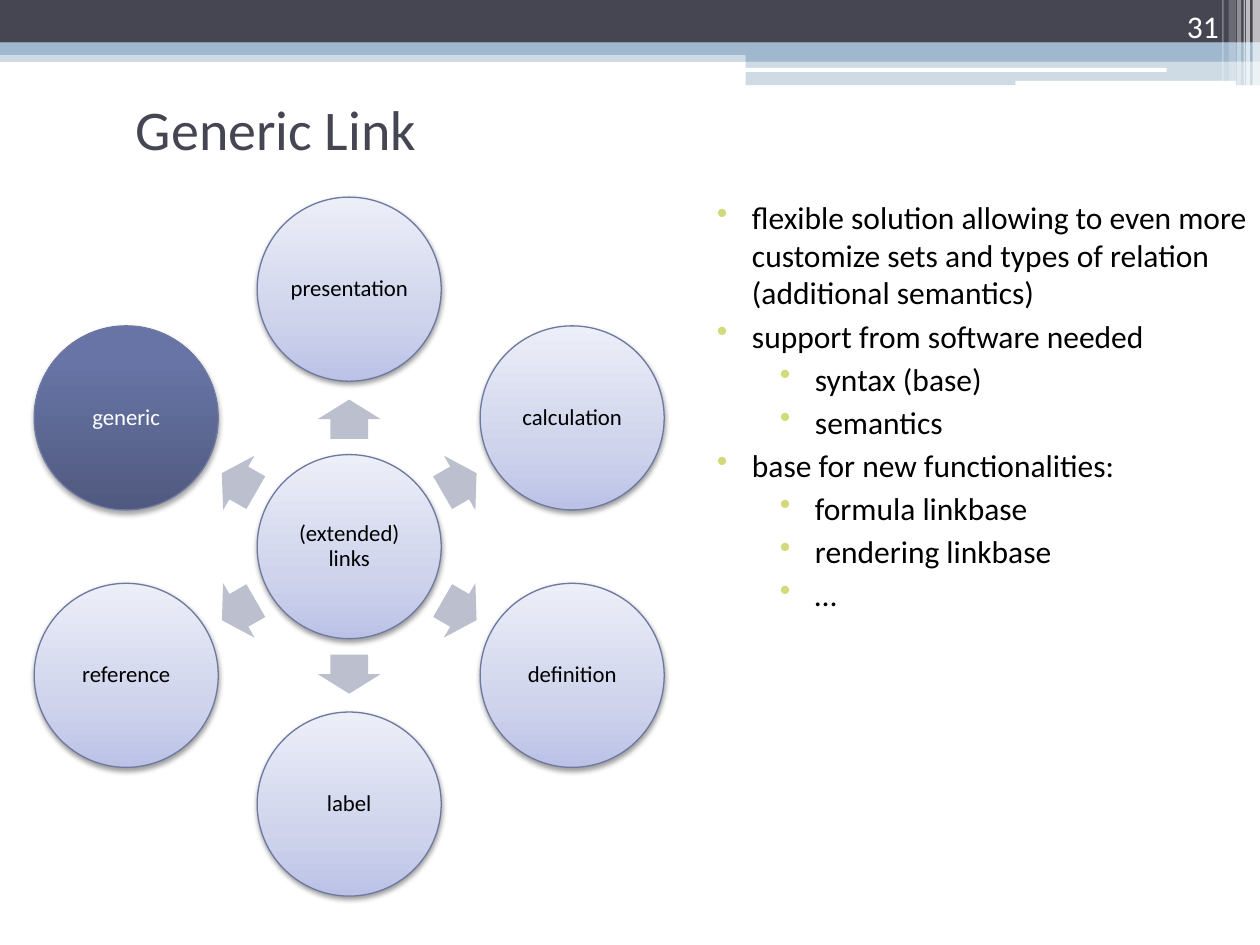
import math

from lxml import etree
from pptx import Presentation
from pptx.dml.color import RGBColor
from pptx.enum import shapes, text
from pptx.oxml.ns import qn
from pptx.util import Cm, Pt

INK = RGBColor(0x46, 0x46, 0x53)
STEEL = RGBColor(0x9F, 0xB8, 0xCD)
WHITE = RGBColor(0xFF, 0xFF, 0xFF)
BLACK = RGBColor(0x00, 0x00, 0x00)
OUTLINE = RGBColor(0x6E, 0x79, 0xA1)
ARROW = RGBColor(0xBC, 0xBF, 0xCE)
BULLET = RGBColor(0xD2, 0xDA, 0x7A)
PALE_STOPS = [
    (0, RGBColor(0xBB, 0xC2, 0xE6)),
    (35, RGBColor(0xCF, 0xD4, 0xEC)),
    (100, RGBColor(0xEC, 0xEE, 0xF8)),
]
DARK_STOPS = [
    (0, RGBColor(0x50, 0x59, 0x7F)),
    (80, RGBColor(0x67, 0x74, 0xA5)),
    (100, RGBColor(0x67, 0x74, 0xA7)),
]
KINDS = shapes.MSO_SHAPE


def add_filled(kind, left, top, width, height, color, opacity=100):
    shape = page.shapes.add_shape(kind, Cm(left), Cm(top), Cm(width), Cm(height))
    shape.shadow.inherit = False
    shape.line.fill.background()
    shape.fill.solid()
    shape.fill.fore_color.rgb = color
    if opacity < 100:
        tint = shape._element.spPr.find(qn("a:solidFill"))[0]
        etree.SubElement(tint, qn("a:alpha"), val=str(opacity * 1000))
    return shape


def add_span(para, words, size, color):
    span = para.add_run()
    span.text = words
    span.font.name = "Calibri"
    span.font.size = Pt(size)
    span.font.color.rgb = color


deck = Presentation()
deck.slide_width = Cm(25.4)
deck.slide_height = Cm(19.05)
page = deck.slides.add_slide(deck.slide_layouts[6])

for left, top, width, height, color, opacity in [
    (0, 1.02, 25.4, 0.23, STEEL, 50),
    (0, 0, 25.4, 0.86, INK, 100),
    (0, 0.86, 25.4, 0.25, STEEL, 100),
    (15.03, 0.99, 10.37, 0.25, STEEL, 100),
    (15.03, 1.22, 10.37, 0.5, STEEL, 50),
]:
    add_filled(KINDS.RECTANGLE, left, top, width, height, color, opacity)

for left, top, width, height in [(15.01, 1.37, 8.51, 0.08), (20.47, 1.63, 4.45, 0.1)]:
    add_filled(KINDS.ROUNDED_RECTANGLE, left, top, width, height, WHITE)

for left, width, height, opacity in [
    (25.25, 0.15, 1.73, 65),
    (25.12, 0.08, 1.73, 65),
    (25.07, 0.03, 1.73, 60),
    (24.94, 0.08, 1.73, 40),
    (24.77, 0.15, 1.63, 20),
    (24.64, 0.03, 1.63, 30),
]:
    add_filled(KINDS.RECTANGLE, left, 0, width, height, WHITE, opacity)

for words, left, top, width, height, size, color, anchor, align in [
    ("Generic Link", 2.49, 1.19, 22.1, 2.77, 32, INK,
     text.MSO_ANCHOR.MIDDLE, text.PP_ALIGN.LEFT),
    ("31", 22.71, 0, 2.11, 1.02, 18, WHITE,
     text.MSO_ANCHOR.BOTTOM, text.PP_ALIGN.RIGHT),
]:
    box = page.shapes.add_textbox(Cm(left), Cm(top), Cm(width), Cm(height))
    box.text_frame.word_wrap = True
    box.text_frame.vertical_anchor = anchor
    para = box.text_frame.paragraphs[0]
    para.alignment = align
    add_span(para, words, size, color)

HUB_X, HUB_Y = 7.04, 11.02
DIAMETER = 3.71
ORBIT = 5.19
ARROW_ORBIT = 2.57
ARROW_LENGTH, ARROW_WIDTH = 0.79, 1.27

circles = [(["(extended)", "links"], HUB_X, HUB_Y)]
satellites = ["presentation", "calculation", "definition", "label", "reference", "generic"]
for index, name in enumerate(satellites):
    degrees = index * 60 - 90
    across, down = math.cos(math.radians(degrees)), math.sin(math.radians(degrees))
    circles.append(([name], HUB_X + ORBIT * across, HUB_Y + ORBIT * down))
    arrow = add_filled(
        KINDS.RIGHT_ARROW,
        HUB_X + ARROW_ORBIT * across - ARROW_LENGTH / 2,
        HUB_Y + ARROW_ORBIT * down - ARROW_WIDTH / 2,
        ARROW_LENGTH, ARROW_WIDTH, ARROW,
    )
    arrow.adjustments[0] = 0.6
    arrow.rotation = degrees % 360

for lines, center_x, center_y in circles:
    chosen = lines == ["generic"]
    circle = add_filled(
        KINDS.OVAL, center_x - DIAMETER / 2, center_y - DIAMETER / 2,
        DIAMETER, DIAMETER, WHITE,
    )
    circle.line.color.rgb = OUTLINE
    circle.line.width = Pt(0.75)
    circle.fill.gradient()
    circle.fill.gradient_angle = 90
    properties = circle._element.spPr
    stops = properties.find(qn("a:gradFill")).find(qn("a:gsLst"))
    for stop in list(stops):
        stops.remove(stop)
    for position, color in DARK_STOPS if chosen else PALE_STOPS:
        stop = etree.SubElement(stops, qn("a:gs"), pos=str(position * 1000))
        etree.SubElement(stop, qn("a:srgbClr"), val=str(color))
    shadow = etree.SubElement(
        properties.find(qn("a:effectLst")), qn("a:outerShdw"),
        blurRad=str(Pt(3.1)), dist=str(Pt(1.8 if chosen else 1.6)),
        dir="5400000", rotWithShape="0",
    )
    shade = etree.SubElement(shadow, qn("a:srgbClr"), val=str(BLACK))
    etree.SubElement(shade, qn("a:alpha"), val="35000" if chosen else "38000")

    frame = circle.text_frame
    frame.word_wrap = True
    frame.vertical_anchor = text.MSO_ANCHOR.MIDDLE
    frame.margin_left = frame.margin_right = Cm(0.05)
    frame.margin_top = frame.margin_bottom = Cm(0.05)
    para = frame.paragraphs[0]
    para.alignment = text.PP_ALIGN.CENTER
    para.line_spacing = 0.9
    for number, line in enumerate(lines):
        if number:
            para.add_line_break()
        add_span(para, line, 13, WHITE if chosen else BLACK)

box = page.shapes.add_textbox(Cm(13.89), Cm(3.76), Cm(11.51), Cm(15.29))
frame = box.text_frame
frame.word_wrap = True
frame.margin_top = Cm(0.23)
for index, (level, words) in enumerate([
    (0, "flexible solution allowing to even more customize sets and types of relation "
        "(additional semantics)"),
    (0, "support from software needed"),
    (1, "syntax (base)"),
    (1, "semantics"),
    (0, "base for new functionalities:"),
    (1, "formula linkbase"),
    (1, "rendering linkbase"),
    (1, "…"),
]):
    para = frame.add_paragraph() if index else frame.paragraphs[0]
    para.level = level
    settings = para._p.get_or_add_pPr()
    settings.set("marL", str(Cm(1.02 + 1.27 * level)))
    settings.set("indent", str(Cm(-0.71)))
    tint = etree.SubElement(settings, qn("a:buClr"))
    etree.SubElement(tint, qn("a:srgbClr"), val=str(BULLET))
    etree.SubElement(settings, qn("a:buChar"), char="•")
    if index:
        para.space_before = Pt(3)
    add_span(para, words, 18, BLACK)

deck.save("out.pptx")
